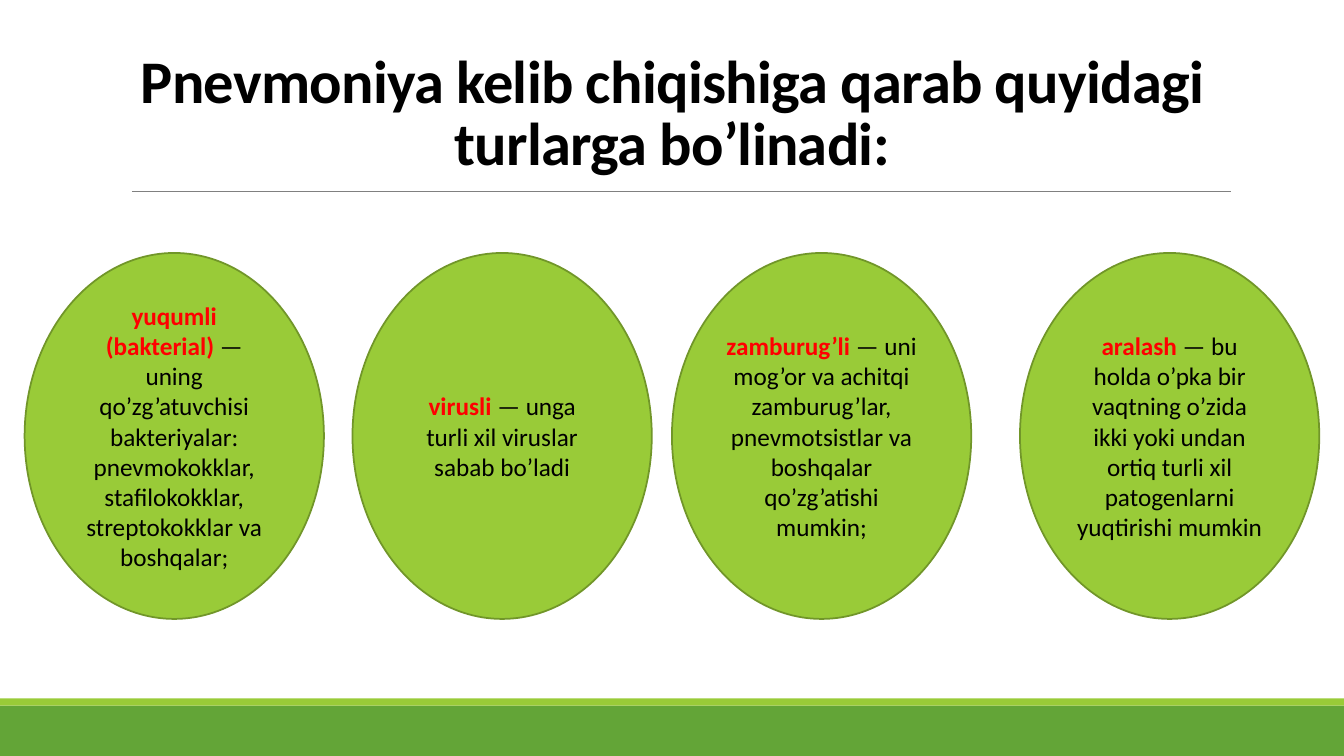
from dataclasses import dataclass

from lxml.etree import SubElement
from pptx import Presentation
from pptx.dml.color import RGBColor
from pptx.enum.shapes import MSO_CONNECTOR as Connector, MSO_SHAPE as Shape
from pptx.enum.text import MSO_ANCHOR as Anchor, PP_ALIGN as Align
from pptx.oxml.ns import qn
from pptx.util import Pt


@dataclass(frozen=True)
class Theme:
    font: str = "Calibri"
    title_size: float = 43.2
    body_size: float = 18
    text: str = "000000"
    term: str = "FF0000"
    lime: str = "99CB38"
    green: str = "63A537"
    outline: str = "719629"
    rule: str = "808080"


def add_text(paragraph, text, *, font, size, color, bold=False, spacing=None):
    run = paragraph.add_run()
    run.text = text
    run.font.name = font
    run.font.size = Pt(size)
    run.font.bold = bold
    run.font.color.rgb = RGBColor.from_string(color)
    if spacing is not None:
        run._r.get_or_add_rPr().set("spc", str(round(spacing * 100)))


class SlideBuilder:
    def __init__(self, slide, theme):
        self.shapes = slide.shapes
        self.theme = theme

    def shape(self, kind, left, top, width, height, fill, outline=None):
        body = self.shapes.add_shape(kind, Pt(left), Pt(top), Pt(width), Pt(height))
        body.shadow.inherit = False
        body.fill.solid()
        body.fill.fore_color.rgb = RGBColor.from_string(fill)
        if outline:
            body.line.color.rgb = RGBColor.from_string(outline)
            body.line.width = Pt(1.25)
        else:
            body.line.fill.background()
        return body

    def band(self, top, height, fill):
        self.shape(Shape.RECTANGLE, 0, top, 960, height, fill)

    def rule(self, left, right, y):
        rule = self.shapes.add_connector(
            Connector.STRAIGHT, Pt(left), Pt(y), Pt(right), Pt(y)
        )
        rule.line.color.rgb = RGBColor.from_string(self.theme.rule)
        rule.line.width = Pt(0.5)
        SubElement(rule._element.spPr, qn("a:effectLst"))

    def title(self, text, left, top, width, height):
        frame = self.shapes.add_textbox(
            Pt(left), Pt(top), Pt(width), Pt(height)
        ).text_frame
        frame.word_wrap = True
        frame.vertical_anchor = Anchor.TOP
        paragraph = frame.paragraphs[0]
        paragraph.alignment = Align.CENTER
        paragraph.line_spacing = 0.85
        add_text(paragraph, text, font=self.theme.font, size=self.theme.title_size,
                 color=self.theme.text, bold=True, spacing=-0.5)

    def oval(self, left, term, description):
        theme = self.theme
        frame = self.shape(Shape.OVAL, left, 180.7, 213.8, 261.4,
                           theme.lime, theme.outline).text_frame
        frame.word_wrap = True
        frame.vertical_anchor = Anchor.MIDDLE
        paragraph = frame.paragraphs[0]
        paragraph.alignment = Align.CENTER
        add_text(paragraph, term + " ", font=theme.font, size=theme.body_size,
                 color=theme.term, bold=True)
        add_text(paragraph, "— " + description, font=theme.font,
                 size=theme.body_size, color=theme.text)


PNEUMONIA_TYPES = [
    (17.6, "yuqumli (bakterial)",
     "uning qo’zg’atuvchisi bakteriyalar: pnevmokokklar, stafilokokklar, "
     "streptokokklar va boshqalar;"),
    (251.8, "virusli", "unga turli xil viruslar sabab bo’ladi"),
    (480, "zamburug’li",
     "uni mog’or va achitqi zamburug’lar, pnevmotsistlar va boshqalar "
     "qo’zg’atishi mumkin;"),
    (728.6, "aralash",
     "bu holda o’pka bir vaqtning o’zida ikki yoki undan ortiq turli xil "
     "patogenlarni yuqtirishi mumkin"),
]


def main():
    deck = Presentation()
    deck.slide_width, deck.slide_height = Pt(960), Pt(540)
    theme = Theme()
    builder = SlideBuilder(deck.slides.add_slide(deck.slide_layouts[6]), theme)
    builder.band(504, 36, theme.green)
    builder.band(498.8, 5.2, theme.lime)
    builder.rule(94.3, 879, 136.6)
    builder.title("Pnevmoniya kelib chiqishiga qarab quyidagi turlarga bo’linadi:",
                  84, 35.3, 792, 97)
    for left, term, description in PNEUMONIA_TYPES:
        builder.oval(left, term, description)
    deck.save("out.pptx")


if __name__ == "__main__":
    main()
